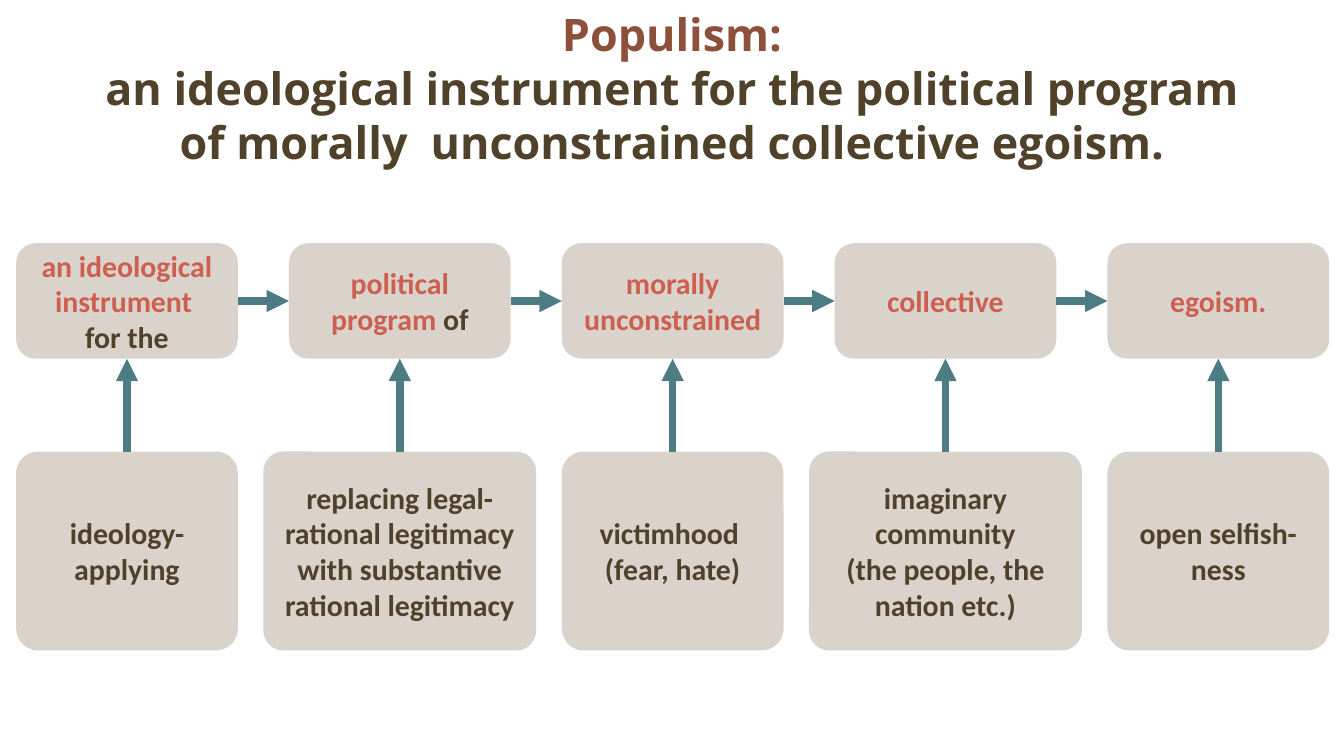
from lxml import etree
from pptx import Presentation
from pptx.dml.color import RGBColor
from pptx.enum.shapes import MSO_CONNECTOR, MSO_SHAPE
from pptx.enum.text import MSO_ANCHOR, MSO_AUTO_SIZE, PP_ALIGN
from pptx.oxml.ns import qn
from pptx.util import Inches, Pt

RUST = RGBColor(0x8D, 0x50, 0x3B)
BROWN = RGBColor(0x50, 0x41, 0x2B)
RED = RGBColor(0xCD, 0x5F, 0x50)
SAND = RGBColor(0xD1, 0xC9, 0xBE)
TEAL = RGBColor(0x4D, 0x7C, 0x85)

LEFT, PITCH, BOX_WIDTH = 0.12, 2.03, 1.65
TOP, LEFT_SIDE, BOTTOM, RIGHT_SIDE = range(4)

# Each column: phrase paragraphs as (text, colour) runs,
# then the explanation's paragraphs, width and corner rounding
COLUMNS = [
    ([[("an ideological instrument ", RED)], [("for the", BROWN)]],
     ["ideology-applying"], 1.65, 0.11),
    ([[("political program ", RED), ("of", BROWN)]],
     ["replacing legal-rational legitimacy with substantive rational legitimacy"], 2.03, 0.1),
    ([[("morally unconstrained", RED)]],
     ["victimhood ", "(fear, hate)"], 1.65, 0.11),
    ([[("collective", RED)]],
     ["imaginary community", "(the people, the nation etc.)"], 2.03, 0.1),
    ([[("egoism.", RED)]],
     ["open selfish-ness"], 1.65, 0.11),
]

# Widescreen 16:9 slide
presentation = Presentation()
presentation.slide_width = Inches(10)
presentation.slide_height = Inches(10 * 9 / 16)
slide = presentation.slides.add_slide(presentation.slide_layouts[5])


def add_box(center, top, width, height, rounding, paragraphs):
    shape = slide.shapes.add_shape(
        MSO_SHAPE.ROUNDED_RECTANGLE, Inches(center - width / 2), Inches(top),
        Inches(width), Inches(height))
    shape.adjustments[0] = rounding
    shape.shadow.inherit = False
    shape.line.fill.background()
    shape.fill.solid()
    shape.fill.fore_color.rgb = SAND
    color = shape._element.spPr.find(".//" + qn("a:srgbClr"))
    etree.SubElement(color, qn("a:alpha"), val="80000")
    text_frame = shape.text_frame
    text_frame.word_wrap = True
    text_frame.vertical_anchor = MSO_ANCHOR.MIDDLE
    for index, runs in enumerate(paragraphs):
        paragraph = text_frame.add_paragraph() if index else text_frame.paragraphs[0]
        paragraph.alignment = PP_ALIGN.CENTER
        for text, run_color in runs:
            run = paragraph.add_run()
            run.text = text
            run.font.name = "Calibri"
            run.font.size = Pt(16)
            run.font.bold = True
            run.font.color.rgb = run_color
    return shape


def add_arrow(start, start_side, end, end_side):
    arrow = slide.shapes.add_connector(MSO_CONNECTOR.STRAIGHT, 0, 0, 0, 0)
    arrow.begin_connect(start, start_side)
    arrow.end_connect(end, end_side)
    arrow.line.color.rgb = TEAL
    arrow.line.width = Pt(4)
    properties = arrow._element.spPr
    etree.SubElement(properties.find(qn("a:ln")), qn("a:tailEnd"), type="triangle")
    etree.SubElement(properties, qn("a:effectLst"))


# Title
title = slide.shapes.title
title.left, title.top = Inches(0.12), Inches(0)
title.width, title.height = Inches(9.76), Inches(1.63)
title_frame = title.text_frame
title_frame.word_wrap = True
title_frame.auto_size = MSO_AUTO_SIZE.NONE
title_frame.vertical_anchor = MSO_ANCHOR.TOP
title_frame.text = ("Populism:\van ideological instrument for the political program"
                    "\vof morally  unconstrained collective egoism.")
heading = title_frame.paragraphs[0]
heading.alignment = PP_ALIGN.CENTER
for index, run in enumerate(heading.runs):
    run.font.name = "Open Sans"
    run.font.size = Pt(24)
    run.font.bold = True
    run.font.color.rgb = BROWN if index else RUST

# Phrases above, explanations below, arrows between them
previous_phrase = None
for column, (phrase_text, explanation_text, width, rounding) in enumerate(COLUMNS):
    center = LEFT + BOX_WIDTH / 2 + column * PITCH
    phrase = add_box(center, 1.81, BOX_WIDTH, 0.86, 0.17, phrase_text)
    explanation = add_box(center, 3.36, width, 1.48, rounding,
                          [[(text, BROWN)] for text in explanation_text])
    add_arrow(explanation, TOP, phrase, BOTTOM)
    if previous_phrase is not None:
        add_arrow(previous_phrase, RIGHT_SIDE, phrase, LEFT_SIDE)
    previous_phrase = phrase

presentation.save("out.pptx")
